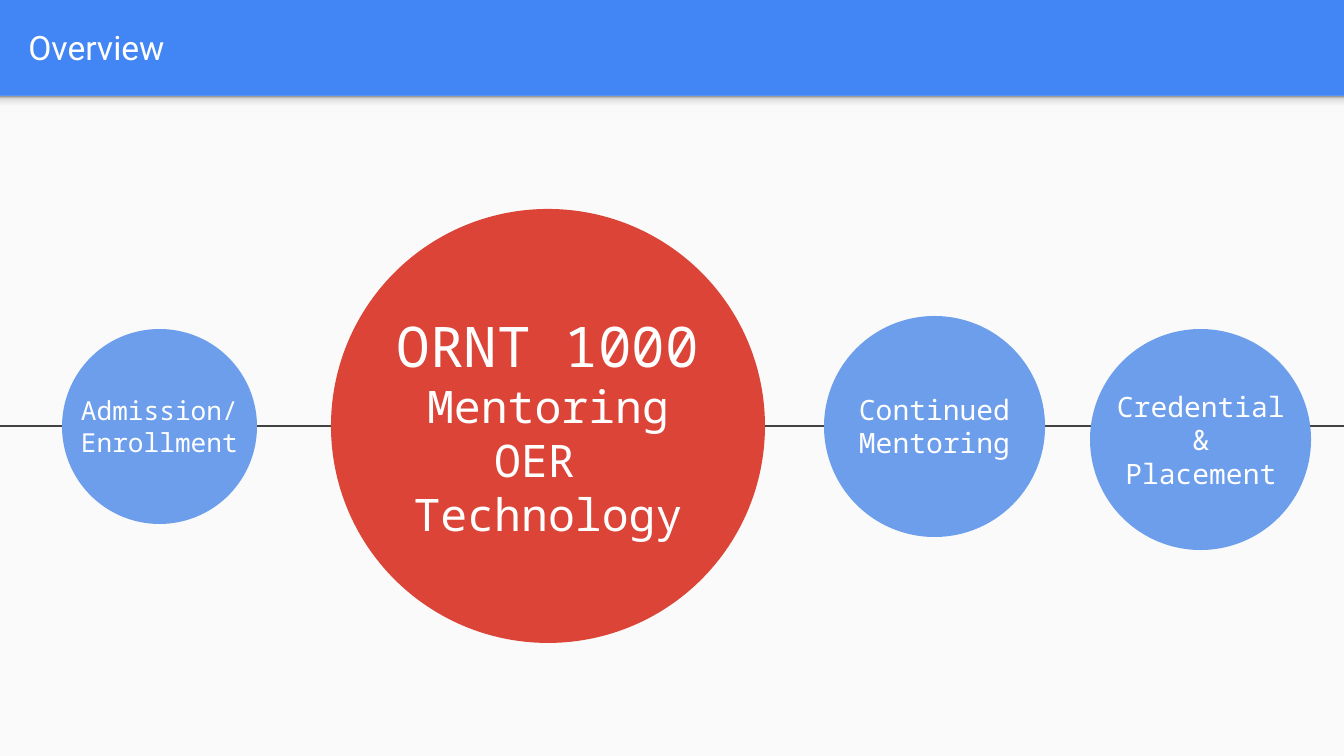
"""Build the Overview slide: a timeline of four stages in circles."""
from lxml.etree import SubElement
from pptx import Presentation
from pptx.dml.color import RGBColor
from pptx.enum.shapes import MSO_CONNECTOR as CONNECTOR, MSO_SHAPE as SHAPE
from pptx.enum.text import MSO_ANCHOR as ANCHOR, PP_ALIGN as ALIGN
from pptx.oxml.ns import qn
from pptx.util import Emu, Inches, Pt

SCALE = 914400 / 134.4
COLORS = {"header": "4285F4", "page": "FAFAFA", "axis": "424242",
          "step": "6D9EEB", "focus": "DB4437", "text": "FFFFFF"}
SHADE = [(0, "F9F9F9"), (36, "F9F9F9"), (80, "DEDEDE"), (100, "999999")]
AXIS_Y = 426
STAGES = [
    (62, 329, 195, "step", (62, 382, 195, 88), [("Admission/Enrollment", 14)]),
    (331, 209, 434, "focus", (331, 382, 434, 88),
     [("ORNT 1000", 30), ("Mentoring", 24), ("OER ", 24), ("Technology", 24)]),
    (824, 316, 221, "step", (824, 382, 221, 88), [("Continued Mentoring", 15)]),
    (1090, 329, 221, "step", (1103, 401, 196, 77), [("Credential & Placement", 15)]),
]


def px(*lengths):
    return [Emu(round(length * SCALE)) for length in lengths]


def write(frame, lines, font, align):
    frame.word_wrap = True
    frame.vertical_anchor = ANCHOR.MIDDLE
    frame.margin_left = frame.margin_right = Inches(0.1)
    frame.margin_top = frame.margin_bottom = Inches(0.1)
    frame.text = "\n".join(line for line, size in lines)
    for paragraph, (line, size) in zip(frame.paragraphs, lines):
        paragraph.alignment = align
        for run in paragraph.runs:
            run.font.name = font
            run.font.size = Pt(size)
            run.font.color.rgb = RGBColor.from_string(COLORS["text"])


deck = Presentation()
deck.slide_width, deck.slide_height = px(1344, 756)
slide = deck.slides.add_slide(deck.slide_layouts[5])
shapes = slide.shapes
slide.background.fill.solid()
slide.background.fill.fore_color.rgb = RGBColor.from_string(COLORS["header"])

title = shapes.title
title.left, title.top, title.width, title.height = px(15, 3, 1297, 89)
write(title.text_frame, [("Overview", 18)], "Roboto", ALIGN.LEFT)

page = shapes.add_shape(SHAPE.RECTANGLE, *px(0, 96, 1344, 660))
page.shadow.inherit = False
page.fill.solid()
page.fill.fore_color.rgb = RGBColor.from_string(COLORS["page"])
page.line.fill.background()

header_shade = shapes.add_shape(SHAPE.RECTANGLE, *px(0, 96, 1344, 16))
header_shade.shadow.inherit = False
header_shade.line.fill.background()
header_shade.fill.gradient()
header_shade.fill.gradient_angle = 90
stops = header_shade.element.spPr.find(".//" + qn("a:gsLst"))
stops.clear()
for position, shade in SHADE:
    stop = SubElement(stops, qn("a:gs"), pos=str(position * 1000))
    SubElement(stop, qn("a:srgbClr"), val=shade)

axis = shapes.add_connector(CONNECTOR.STRAIGHT, *px(-1, AXIS_Y, 1344, AXIS_Y))
axis.line.color.rgb = RGBColor.from_string(COLORS["axis"])
axis.line.width = Pt(1.5)
SubElement(axis.element.spPr, qn("a:effectLst"))

for left, top, diameter, color, label_box, lines in STAGES:
    circle = shapes.add_shape(SHAPE.OVAL, *px(left, top, diameter, diameter))
    circle.shadow.inherit = False
    circle.fill.solid()
    circle.fill.fore_color.rgb = RGBColor.from_string(COLORS[color])
    circle.line.fill.background()
    label = shapes.add_textbox(*px(*label_box))
    write(label.text_frame, lines, "Noto Sans Mono", ALIGN.CENTER)

deck.save("out.pptx")
